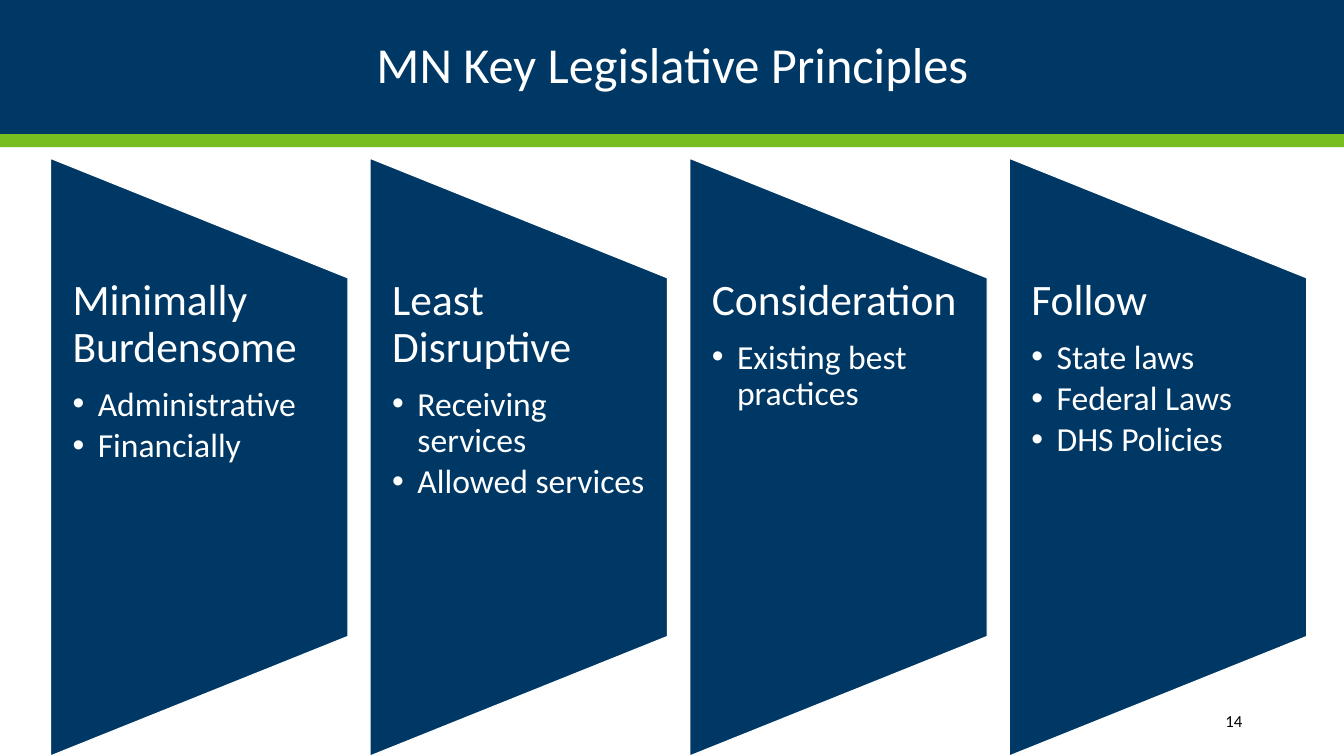
from dataclasses import dataclass

import pptx
import pptx.dml.color
import pptx.enum.shapes
import pptx.enum.text
import pptx.oxml.ns
import pptx.util
from lxml import etree
from pptx.util import Inches, Pt

COLORS = {"navy": "003865", "green": "78BE21", "white": "FFFFFF", "black": "000000"}
FONT = "Calibri"
SHAPE = pptx.enum.shapes.MSO_SHAPE
ALIGN = pptx.enum.text.PP_ALIGN
ANCHOR = pptx.enum.text.MSO_ANCHOR

# Principle columns, in inches
LEFT, TOP, PITCH = 0.5, 1.57, 3.17
WIDTH, HEIGHT = 2.95, 5.93
TEXT_TOP, TEXT_HEIGHT = 2.76, 3.56


@dataclass
class Principle:
    heading: str
    points: list[str]


@dataclass
class Bar:
    top: float
    height: float
    color: str


BARS = [Bar(0, 1.33, "navy"), Bar(1.33, 0.13, "green")]
PRINCIPLES = [
    Principle("Minimally Burdensome", ["Administrative", "Financially"]),
    Principle("Least Disruptive", ["Receiving services", "Allowed services"]),
    Principle("Consideration", ["Existing best practices"]),
    Principle("Follow", ["State laws", "Federal Laws", "DHS Policies"]),
]


def rgb(name: str) -> pptx.dml.color.RGBColor:
    return pptx.dml.color.RGBColor.from_string(COLORS[name])


def set_text(p, text: str, size: float, color: str = "white") -> None:
    p.text = text
    for r in p.runs:
        r.font.name = FONT
        r.font.size = Pt(size)
        r.font.color.rgb = rgb(color)


def add_bullet(p) -> None:
    p.level = 1
    pPr = p._p.get_or_add_pPr()
    pPr.set("marL", str(Inches(0.25)))
    pPr.set("indent", str(Inches(-0.25)))
    etree.SubElement(pPr, pptx.oxml.ns.qn("a:buFont"), typeface="Arial")
    etree.SubElement(pPr, pptx.oxml.ns.qn("a:buChar"), char="•")


def add_filled(s, kind, left: float, top: float, width: float, height: float, color: str):
    sp = s.shapes.add_shape(kind, Inches(left), Inches(top), Inches(width), Inches(height))
    sp.shadow.inherit = False
    sp.fill.solid()
    sp.fill.fore_color.rgb = rgb(color)
    sp.line.fill.background()
    return sp


def add_title(s, text: str) -> None:
    title = s.shapes.title
    title.left, title.top = Inches(0.92), Inches(0)
    title.width, title.height = Inches(11.5), Inches(1.33)
    tf = title.text_frame
    tf.margin_left = tf.margin_right = 0
    tf.vertical_anchor = ANCHOR.MIDDLE
    p = tf.paragraphs[0]
    set_text(p, text, 36)
    p.alignment = ALIGN.CENTER
    p.line_spacing = 0.9
    # Header bars lie behind the title
    for bar in BARS:
        sp = add_filled(s, SHAPE.RECTANGLE, 0, bar.top, 13.33, bar.height, bar.color)
        title.element.addprevious(sp.element)


def add_slide_number(s, number: str) -> None:
    sp = s.shapes.add_textbox(Inches(10.82), Inches(6.95), Inches(1.6), Inches(0.4))
    tf = sp.text_frame
    tf.word_wrap = True
    tf.vertical_anchor = ANCHOR.MIDDLE
    set_text(tf.paragraphs[0], number, 12, "black")
    tf.paragraphs[0].alignment = ALIGN.RIGHT


def add_principle(s, left: float, principle: Principle) -> None:
    # Panel: turned a quarter, so its width and height swap about the centre
    shift = (HEIGHT - WIDTH) / 2
    panel = add_filled(s, SHAPE.FLOWCHART_MANUAL_OPERATION,
                       left - shift, TOP + shift, HEIGHT, WIDTH, "navy")
    panel.rotation = 270
    panel.line.color.rgb = rgb("white")
    panel.line.width = Pt(0.85)

    # Heading and bullets
    sp = s.shapes.add_textbox(Inches(left), Inches(TEXT_TOP), Inches(WIDTH), Inches(TEXT_HEIGHT))
    tf = sp.text_frame
    tf.word_wrap = True
    tf.margin_left = tf.margin_right = Inches(0.22)
    tf.margin_top = tf.margin_bottom = 0
    heading = tf.paragraphs[0]
    set_text(heading, principle.heading, 31)
    heading.line_spacing = 0.9
    heading.space_after = Pt(10.85)
    for point in principle.points:
        p = tf.add_paragraph()
        set_text(p, point, 24)
        p.line_spacing = 0.9
        p.space_after = Pt(3.6)
        add_bullet(p)


def main() -> None:
    prs = pptx.Presentation()
    prs.slide_width, prs.slide_height = Inches(13.33), Inches(7.5)
    s = prs.slides.add_slide(prs.slide_layouts.get_by_name("Title Only"))
    add_title(s, "MN Key Legislative Principles")
    for i, principle in enumerate(PRINCIPLES):
        add_principle(s, LEFT + i * PITCH, principle)
    add_slide_number(s, "14")
    prs.save("out.pptx")


if __name__ == "__main__":
    main()
